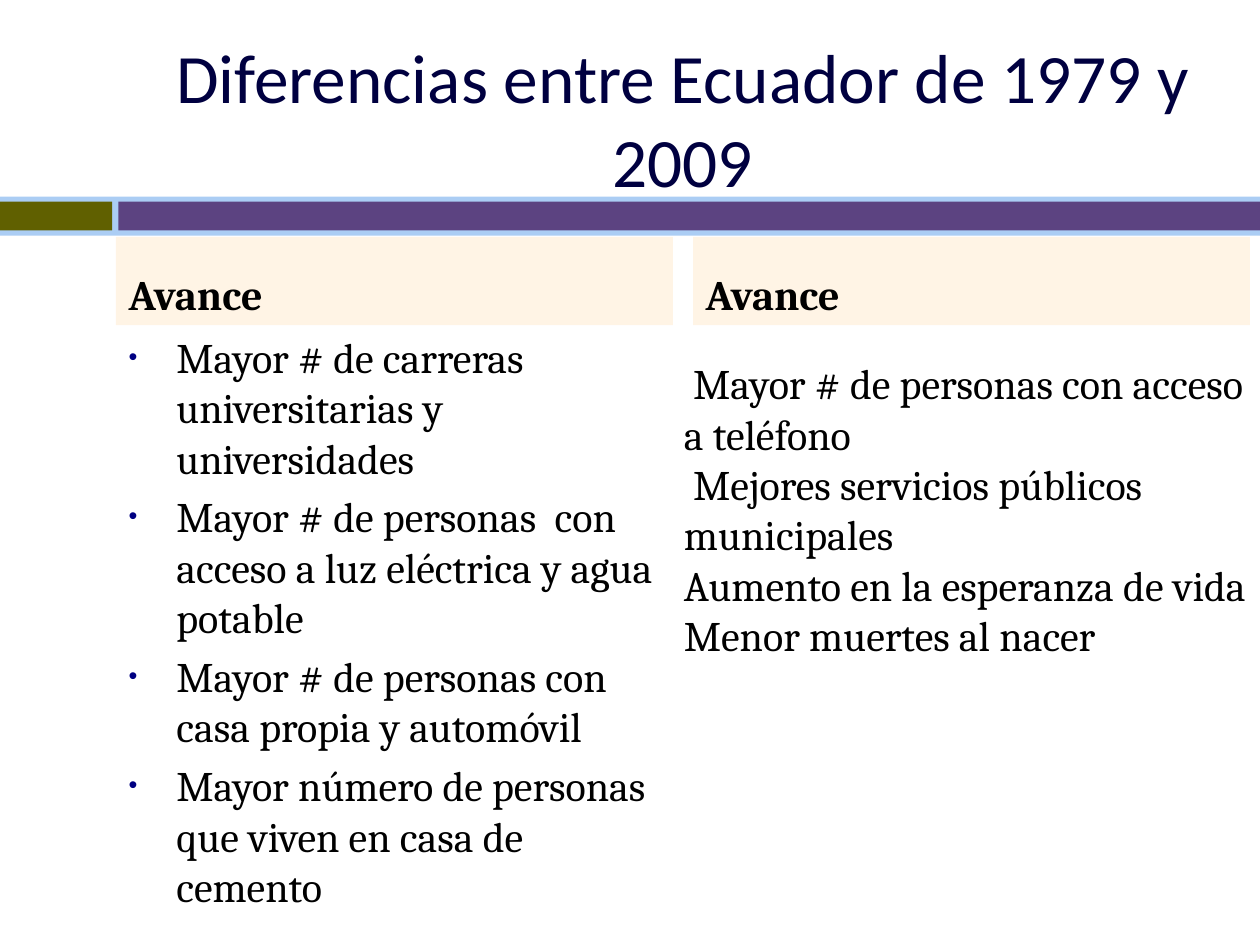
from lxml import etree
from pptx import Presentation
from pptx.dml.color import RGBColor
from pptx.enum.shapes import MSO_SHAPE
from pptx.enum.text import MSO_ANCHOR, MSO_AUTO_SIZE, PP_ALIGN
from pptx.oxml.ns import qn
from pptx.util import Inches, Pt

RECTANGLE = MSO_SHAPE.RECTANGLE
TOP, MIDDLE, BOTTOM = MSO_ANCHOR.TOP, MSO_ANCHOR.MIDDLE, MSO_ANCHOR.BOTTOM
LEFT, CENTER = PP_ALIGN.LEFT, PP_ALIGN.CENTER

NAVY = RGBColor(0x00, 0x00, 0x40)
BULLET_BLUE = RGBColor(0x00, 0x00, 0x82)
BLACK = RGBColor(0x00, 0x00, 0x00)
ORANGE = RGBColor(0xFF, 0x99, 0x00)
PALE_BLUE = RGBColor(0xAB, 0xCD, 0xF4)
OLIVE = RGBColor(0x60, 0x60, 0x00)
PURPLE = RGBColor(0x5C, 0x43, 0x81)

COMPARISON_LAYOUT = 4
COLUMN_LEFTS = (0.92, 5.5)
COLUMN_WIDTH = 4.42
HEADING_TOP, HEADING_HEIGHT = 1.88, 0.7
LIST_TOP = HEADING_TOP + HEADING_HEIGHT
BODY_SIZE = 24
LIST_GAP = 0.2 * BODY_SIZE
LIST_INDENT = 0.38

BARS = (
    (0, 1.56, 10, 0.31, PALE_BLUE),
    (0, 1.6, 0.89, 0.23, OLIVE),
    (0.94, 1.6, 9.06, 0.23, PURPLE),
)
TITLE = "Diferencias entre Ecuador de 1979 y 2009"
HEADING = "Avance"
LEFT_ITEMS = (
    "Mayor # de carreras universitarias y universidades",
    "Mayor # de personas  con acceso a luz eléctrica y agua potable",
    "Mayor # de personas con casa propia y automóvil",
    "Mayor número de personas que viven en casa de cemento",
)
RIGHT_ITEMS = (
    " Mayor # de personas con acceso a teléfono",
    " Mejores servicios públicos municipales",
    "Aumento en la esperanza de vida",
    "Menor muertes al nacer",
)


def place(shape, left, top, width, height):
    shape.left, shape.top = Inches(left), Inches(top)
    shape.width, shape.height = Inches(width), Inches(height)


def add_bullet(para):
    """Give the paragraph a hanging indent and a small blue dot."""
    properties = para._p.get_or_add_pPr()
    properties.set("marL", str(Inches(LIST_INDENT)))
    properties.set("indent", str(-Inches(LIST_INDENT)))
    color = etree.SubElement(properties, qn("a:buClr"))
    etree.SubElement(color, qn("a:srgbClr"), val=str(BULLET_BLUE))
    etree.SubElement(properties, qn("a:buSzPct"), val="60000")
    etree.SubElement(properties, qn("a:buChar"), char="•")


def write(box, lines, font="Cambria", size=BODY_SIZE, color=BLACK, bold=False,
          anchor=TOP, align=LEFT, gap=0, bullets=False):
    frame = box.text_frame
    frame.word_wrap = True
    frame.auto_size = MSO_AUTO_SIZE.NONE
    frame.vertical_anchor = anchor
    frame.text = "\n".join(lines)
    for para in frame.paragraphs:
        para.alignment = align
        para.space_before = Pt(gap)
        if bullets:
            add_bullet(para)
        para.font.name = font
        para.font.size = Pt(size)
        para.font.bold = bold
        para.font.color.rgb = color


def add_bars(page):
    """Draw the divider as one group behind the text."""
    group = page.shapes.add_group_shape()
    for left, top, width, height, color in BARS:
        bar = group.shapes.add_shape(RECTANGLE, Inches(left), Inches(top),
                                     Inches(width), Inches(height))
        bar.shadow.inherit = False
        bar.fill.solid()
        bar.fill.fore_color.rgb = color
        bar.line.fill.background()
    page.shapes._spTree.insert(2, group._element)


def fill_heading(box, left):
    place(box, left, HEADING_TOP, COLUMN_WIDTH, HEADING_HEIGHT)
    box.fill.solid()
    box.fill.fore_color.rgb = ORANGE
    color = box._element.spPr.find(".//" + qn("a:srgbClr"))
    etree.SubElement(color, qn("a:alpha"), val="10000")
    write(box, [HEADING], bold=True, anchor=BOTTOM, gap=LIST_GAP)


def main():
    deck = Presentation()
    deck.slide_width, deck.slide_height = Inches(10), Inches(7.5)
    page = deck.slides.add_slide(deck.slide_layouts[COMPARISON_LAYOUT])
    title, left_heading, left_list, right_heading, spare = page.placeholders
    spare._element.getparent().remove(spare._element)

    add_bars(page)
    place(title, 0.92, 0.31, 9, 1.25)
    write(title, [TITLE], font="Calibri", size=39.6, color=NAVY,
          anchor=MIDDLE, align=CENTER)
    for heading, left in zip((left_heading, right_heading), COLUMN_LEFTS):
        fill_heading(heading, left)
    place(left_list, COLUMN_LEFTS[0], LIST_TOP, COLUMN_WIDTH, 4.59)
    write(left_list, LEFT_ITEMS, gap=LIST_GAP, bullets=True)

    right_box = page.shapes.add_textbox(Inches(5.33), Inches(2.79),
                                        Inches(4.67), Inches(2.93))
    write(right_box, RIGHT_ITEMS)
    deck.save("out.pptx")


if __name__ == "__main__":
    main()
